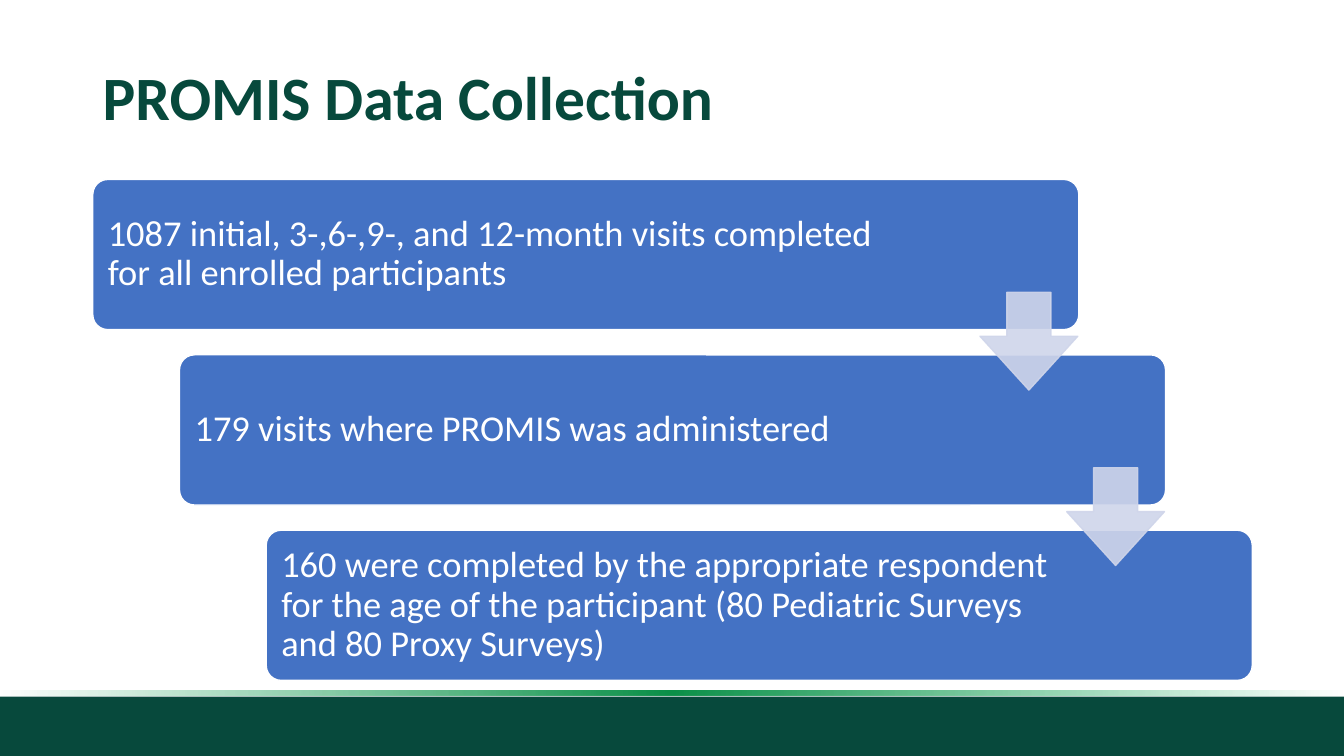
from lxml import etree
from pptx import Presentation
from pptx.dml.color import RGBColor
from pptx.enum.shapes import MSO_SHAPE
from pptx.enum.text import MSO_ANCHOR
from pptx.oxml.ns import qn
from pptx.util import Inches, Pt

RECTANGLE = MSO_SHAPE.RECTANGLE
ROUNDED = MSO_SHAPE.ROUNDED_RECTANGLE
DOWN_ARROW = MSO_SHAPE.DOWN_ARROW
MIDDLE = MSO_ANCHOR.MIDDLE

GREEN = RGBColor(0x07, 0x49, 0x3C)
BLUE = RGBColor(0x44, 0x72, 0xC4)
PALE = RGBColor(0xCF, 0xD5, 0xEA)
WHITE = RGBColor(0xFF, 0xFF, 0xFF)
FONT = "Calibri"

TITLE = "PROMIS Data Collection"
# Each step: wording, width of its text area
STEPS = [
    ("1087 initial, 3-,6-,9-, and 12-month visits completed for all enrolled participants", 8.16),
    ("179 visits where PROMIS was administered", 7.85),
    ("160 were completed by the appropriate respondent for the age of the participant "
     "(80 Pediatric Surveys and 80 Proxy Surveys)", 7.85),
]
# Gradient stops: position %, colour, opacity %
GLOW = [(0, "0D9D4F", 0), (50, "0C9049", 100), (100, "0FAB56", 0)]

STEP_LEFT, STEP_TOP = 0.92, 1.78
STEP_WIDTH, STEP_HEIGHT = 9.78, 1.49
SHIFT_X, SHIFT_Y = 0.86, 1.74
TEXT_MARGIN = 0.04
ARROW_LEFT, ARROW_TOP, ARROW_SIZE = 9.72, 2.9, 0.97


def add_block(page, kind, left, top, width, height, fill=None, line=None):
    block = page.shapes.add_shape(kind, Inches(left), Inches(top), Inches(width), Inches(height))
    block.shadow.inherit = False
    if fill is not None:
        block.fill.solid()
        block.fill.fore_color.rgb = fill
    if line is None:
        block.line.fill.background()
    else:
        block.line.color.rgb = line
        block.line.width = Pt(1)
    return block


def add_text(page, text, left, top, width, height, size, color, bold, inset_x, inset_y):
    box = page.shapes.add_textbox(Inches(left), Inches(top), Inches(width), Inches(height))
    frame = box.text_frame
    frame.word_wrap = True
    frame.vertical_anchor = MIDDLE
    frame.margin_left = frame.margin_right = Inches(inset_x)
    frame.margin_top = frame.margin_bottom = Inches(inset_y)
    para = frame.paragraphs[0]
    para.line_spacing = 0.9
    span = para.add_run()
    span.text = text
    span.font.name = FONT
    span.font.size = Pt(size)
    span.font.bold = bold
    span.font.color.rgb = color


def set_opacity(color_element, percent):
    etree.SubElement(color_element, qn("a:alpha"), val=str(percent * 1000))


def set_glow(block):
    """Fill the block with a horizontal gradient that fades at both ends."""
    block.fill.gradient()
    block.fill.gradient_angle = 0
    stops = block._element.spPr.find(qn("a:gradFill")).find(qn("a:gsLst"))
    for stop in list(stops):
        stops.remove(stop)
    for position, color, opacity in GLOW:
        stop = etree.SubElement(stops, qn("a:gs"), pos=str(position * 1000))
        set_opacity(etree.SubElement(stop, qn("a:srgbClr"), val=color), opacity)


def add_step(page, index, text, text_width):
    left = STEP_LEFT + index * SHIFT_X
    top = STEP_TOP + index * SHIFT_Y
    card = add_block(page, ROUNDED, left, top, STEP_WIDTH, STEP_HEIGHT, BLUE, WHITE)
    card.adjustments[0] = 0.1
    add_text(page, text, left + TEXT_MARGIN, top + TEXT_MARGIN, text_width,
             STEP_HEIGHT - 2 * TEXT_MARGIN, 26, WHITE, False, 0.11, 0.11)


def add_arrow(page, index):
    arrow = add_block(page, DOWN_ARROW, ARROW_LEFT + index * SHIFT_X, ARROW_TOP + index * SHIFT_Y,
                      ARROW_SIZE, ARROW_SIZE, PALE, PALE)
    arrow.adjustments[0] = 0.45
    arrow.adjustments[1] = 0.55
    for color in arrow._element.spPr.iter(qn("a:srgbClr")):
        set_opacity(color, 90)


def main():
    deck = Presentation()
    deck.slide_width, deck.slide_height = Inches(13.33), Inches(7.5)
    page = deck.slides.add_slide(deck.slide_layouts[6])

    add_block(page, RECTANGLE, 0, 6.91, 13.33, 0.59, GREEN)
    set_glow(add_block(page, RECTANGLE, 0, 6.85, 13.33, 0.05))
    add_text(page, TITLE, 0.92, 0.4, 11.5, 1.19, 44, GREEN, True, 0.1, 0.05)

    for index, (text, text_width) in enumerate(STEPS):
        add_step(page, index, text, text_width)
    for index in range(len(STEPS) - 1):
        add_arrow(page, index)

    deck.save("out.pptx")


if __name__ == "__main__":
    main()
